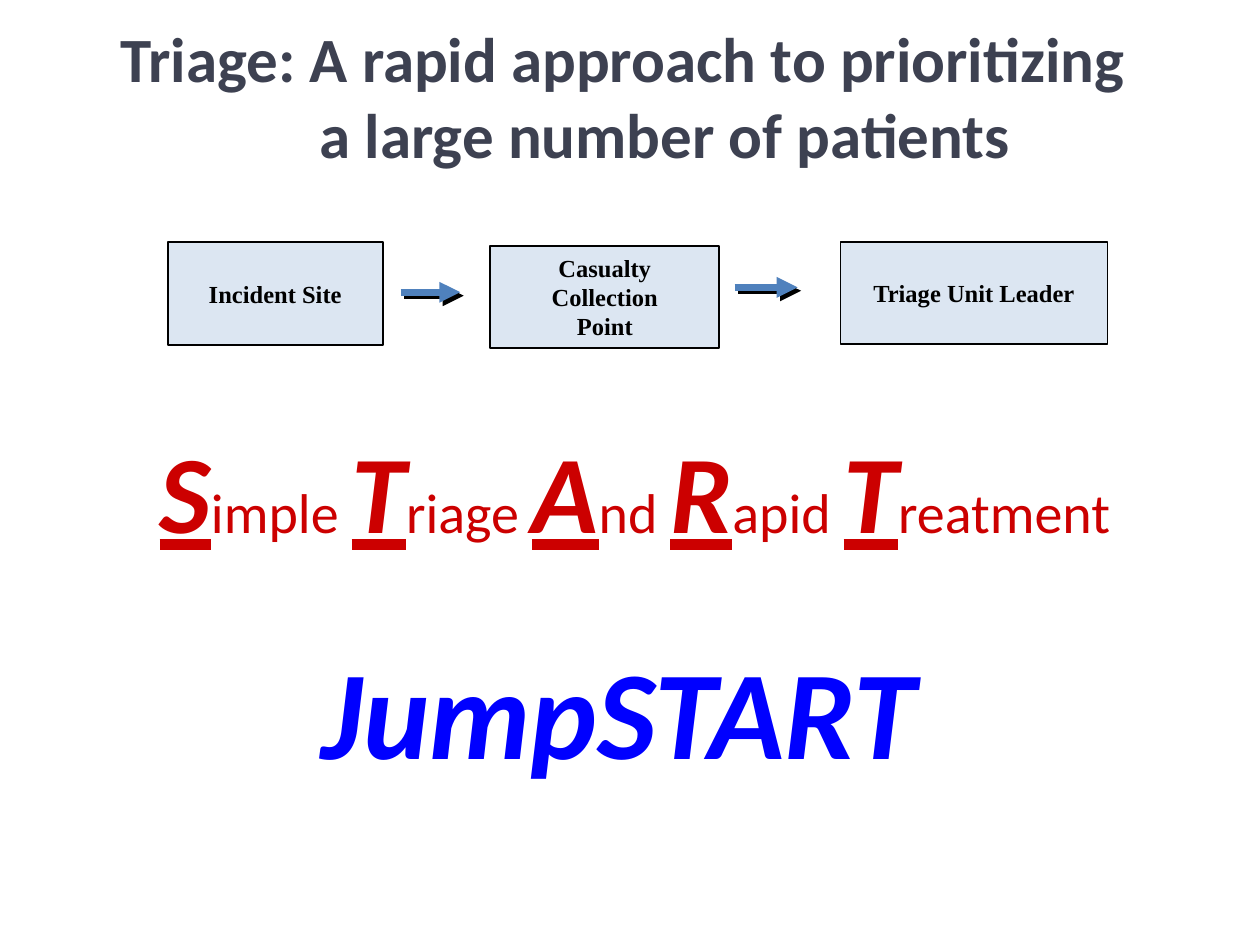
from lxml.etree import SubElement
from pptx import Presentation
from pptx.dml.color import RGBColor
from pptx.enum.shapes import MSO_CONNECTOR as CONN, MSO_SHAPE as SHAPE
from pptx.enum.text import MSO_ANCHOR as ANCHOR, MSO_AUTO_SIZE as AUTO, PP_ALIGN as ALIGN
from pptx.oxml.ns import qn
from pptx.util import Pt

SLATE = RGBColor(0x3D, 0x41, 0x51)
RED = RGBColor(0xCC, 0x00, 0x00)
BLUE = RGBColor(0x00, 0x00, 0xFF)
PALE = RGBColor(0xDC, 0xE6, 0xF2)
STEEL = RGBColor(0x4F, 0x81, 0xBD)
BLACK = RGBColor(0x00, 0x00, 0x00)


def set_font(font, name, size, color, bold=False, italic=False):
    """Apply the usual font settings."""
    font.name, font.size = name, Pt(size)
    font.bold, font.italic = bold, italic
    font.color.rgb = color


def add_title(s, x, y, w, h):
    """Fill the title, with its second line indented."""
    sp = s.shapes.title
    sp.left, sp.top, sp.width, sp.height = Pt(x), Pt(y), Pt(w), Pt(h)
    tf = sp.text_frame
    tf.auto_size, tf.vertical_anchor = AUTO.NONE, ANCHOR.MIDDLE
    tf.text = "Triage: A rapid approach to prioritizing \na large number of patients"
    for p in tf.paragraphs:
        p.alignment = ALIGN.CENTER
        set_font(p.font, "Calibri", 36, SLATE, bold=True)
    tf.paragraphs[1]._p.get_or_add_pPr().set("marL", str(Pt(40)))


def add_step(s, x, y, w, h, text):
    """Draw one bordered box of the flow."""
    sp = s.shapes.add_shape(SHAPE.RECTANGLE, Pt(x), Pt(y), Pt(w), Pt(h))
    sp.shadow.inherit = False
    sp.fill.solid()
    sp.fill.fore_color.rgb = PALE
    sp.line.color.rgb, sp.line.width = BLACK, Pt(1)
    tf = sp.text_frame
    tf.word_wrap, tf.vertical_anchor = True, ANCHOR.MIDDLE
    tf.text = text
    for p in tf.paragraphs:
        p.alignment = ALIGN.CENTER
        set_font(p.font, "Times New Roman", 14, BLACK, bold=True)


def add_arrow(s, x, y, length):
    """Draw a thick arrow to the right with a hard shadow."""
    line = s.shapes.add_connector(CONN.STRAIGHT, Pt(x), Pt(y), Pt(x + length), Pt(y))
    line.line.color.rgb, line.line.width = STEEL, Pt(4)
    SubElement(line.line._get_or_add_ln(), qn("a:tailEnd"), type="triangle")
    effects = SubElement(line._element.spPr, qn("a:effectLst"))
    shadow = SubElement(effects, qn("a:outerShdw"), dist=str(Pt(2.8)), dir="2700000")
    SubElement(shadow, qn("a:srgbClr"), val=str(BLACK))


def add_flow(s, x, y):
    """Lay out the three steps and the arrows between them."""
    add_step(s, x, y, 123, 59, "Incident Site")
    add_arrow(s, x + 133.2, y + 28.8, 34)
    add_step(s, x + 184.3, y + 2.2, 131, 58.3, "Casualty\nCollection\nPoint")
    add_arrow(s, x + 324, y + 26, 36)
    add_step(s, x + 384.5, y, 152.6, 58.3, "Triage Unit Leader")


def add_text(s, x, y, w, h):
    """Add a wrapping text box and return its first paragraph."""
    tf = s.shapes.add_textbox(Pt(x), Pt(y), Pt(w), Pt(h)).text_frame
    tf.word_wrap = True
    return tf.paragraphs[0]


def add_acronym(s, x, y, w, h):
    """Write the START phrase with large underlined initials."""
    p = add_text(s, x, y, w, h)
    p.line_spacing = 0.9
    for word in ("Simple ", "Triage ", "And ", "Rapid ", "Treatment"):
        r = p.add_run()
        r.text = word[0]
        set_font(r.font, "Calibri", 63, RED, bold=True, italic=True)
        r.font.underline = True
        r = p.add_run()
        r.text = word[1:]
        set_font(r.font, "Calibri", 32, RED)


def add_jumpstart(s, x, y, w, h):
    """Write the large centred method name."""
    p = add_text(s, x, y, w, h)
    p.text = "JumpSTART"
    p.alignment = ALIGN.CENTER
    set_font(p.font, "Calibri", 72, BLUE, bold=True, italic=True)


def main():
    """Build and save the slide."""
    prs = Presentation()
    prs.slide_width, prs.slide_height = Pt(720), Pt(540)
    s = prs.slides.add_slide(prs.slide_layouts[5])
    add_title(s, 0, 7.2, 720, 94.4)
    add_flow(s, 95.8, 138.2)
    add_acronym(s, 84.2, 247, 562.4, 122.4)
    add_jumpstart(s, 131.8, 358.6, 443.5, 94.4)
    prs.save("out.pptx")


if __name__ == "__main__":
    main()
